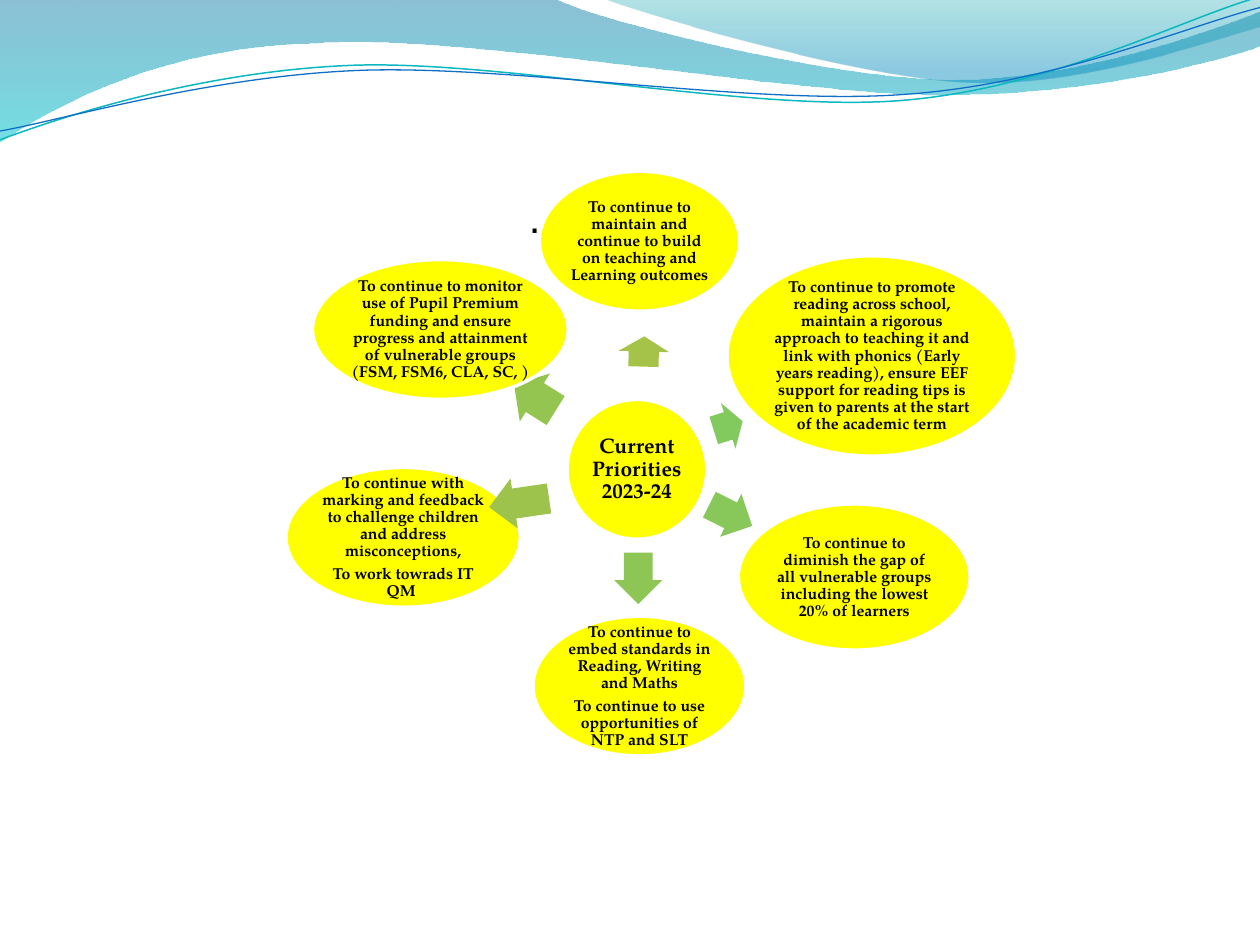
"""Build a slide of school priorities arranged round a central circle."""
from lxml.etree import SubElement
from pptx import Presentation
from pptx.dml.color import RGBColor as RGB
from pptx.enum.shapes import MSO_SHAPE as Kind
from pptx.enum.text import MSO_ANCHOR as Anchor, PP_ALIGN as Align
from pptx.oxml.ns import qn
from pptx.util import Inches, Pt

HUES = {
    "oval": "FFFF00", "text": "000000", "edge": "FFFFFF",
    "teal": "0AB8BF", "blue": "0F6FC6",
    "deep": "0074A1", "cyan": "00C6CF", "sea": "00A1A9", "sky": "008BBF",
}


def draw_path(start, parts, close):
    """Draw a path whose parts hold one line end or three curve points."""
    pts = [(Inches(x), Inches(y)) for part in parts
           for x, y in zip(part[::2], part[1::2])]
    pen = slide.shapes.build_freeform(*map(Inches, start))
    pen.add_line_segments(pts, close=close)
    shape = pen.convert_to_shape()
    shape.shadow.inherit = False
    lines = iter(shape._element.spPr.findall(".//" + qn("a:lnTo")))
    for part in parts:
        line = next(lines)
        if len(part) == 6:
            line.tag = qn("a:cubicBezTo")
            for _ in range(2):
                extra = next(lines)
                line.append(extra[0])
                extra.getparent().remove(extra)
    return shape


def style_text(frame, font, size, bold):
    """Centre the text and set its font."""
    frame.word_wrap = True
    for para in frame.paragraphs:
        para.alignment = Align.CENTER
        for run in para.runs:
            run.font.name = font
            run.font.size = Pt(size)
            run.font.bold = bold
            run.font.color.rgb = RGB.from_string(HUES["text"])


deck = Presentation()
deck.slide_width, deck.slide_height = Inches(10), Inches(7.5)
slide = deck.slides.add_slide(deck.slide_layouts[6])

bands = [
    ((0, 0), [(4.4, -0.01), (4.76, 0.17, 6.64, 0.63, 7.58, 0.63),
              (8.53, 0.63, 9.58, 0.26, 10, 0.09), (10.01, 0.36),
              (9.83, 0.44, 8.7, 0.76, 7.46, 0.75),
              (6.22, 0.75, 3.82, 0.28, 2.57, 0.34),
              (1.29, 0.36, 0.46, 0.83, -0.01, 1.13), (0, 0)],
     [(0, "deep", 45), (1, "cyan", 55)]),
    ((4.79, -0.01), [(5.09, 0.11, 6.82, 0.62, 7.69, 0.65),
                     (8.56, 0.69, 9.61, 0.32, 10, 0.21), (10, 0),
                     (4.79, -0.01)],
     [(0, "sea", 30), (0.8, "sky", 45)]),
]
for start, parts, stops in bands:
    band = draw_path(start, parts, True)
    band.line.fill.background()
    band.fill.gradient()
    band.fill.gradient_angle = 270
    for stop, (place, hue, _) in zip(band.fill.gradient_stops, stops):
        stop.position = place
        stop.color.rgb = RGB.from_string(HUES[hue])
    marks = band._element.spPr.findall(".//" + qn("a:srgbClr"))
    for mark, (_, _, alpha) in zip(marks, stops):
        SubElement(mark, qn("a:alpha")).set("val", str(alpha * 1000))

waves = [
    ((0, 1.11), [(0.48, 0.93, 1.58, 0.57, 2.77, 0.52),
                 (3.95, 0.47, 5.93, 0.89, 7.13, 0.8),
                 (8.33, 0.71, 9.38, 0.15, 9.98, -0.02)], "teal", 0.85),
    ((0, 1.04), [(0.47, 0.96, 1.64, 0.61, 2.83, 0.56),
                 (4.03, 0.51, 5.97, 0.84, 7.17, 0.75),
                 (8.36, 0.67, 9.41, 0.21, 10, 0.06)], "blue", 0.75),
]
for start, parts, hue, width in waves:
    wave = draw_path(start, parts, False)
    wave.fill.background()
    wave.line.color.rgb = RGB.from_string(HUES[hue])
    wave.line.width = Pt(width)

dot = slide.shapes.add_textbox(Inches(0.67), Inches(1.47), Inches(7.24), Inches(0.5))
dot.text_frame.text = ". "
style_text(dot.text_frame, "Arial", 24, False)

goals = [
    ((4.28, 1.36, 1.59, 1.11), 9,
     "To continue to maintain and continue to build on teaching and "
     "Learning outcomes ", None),
    ((5.77, 2.03, 2.3, 1.59), 9,
     "To continue to promote reading across school, maintain a rigorous "
     "approach to teaching it and link with phonics (Early years reading), "
     "ensure EEF support for reading tips is given to parents at the start "
     "of the academic term", (5.66, 3.19, 0.24, 0.38, 342.5, "82C95E")),
    ((4.5, 3.17, 1.11, 1.11), 12, "Current Priorities 2023-24",
     (5.61, 3.9, 0.38, 0.38, 26.4, "88C75A")),
    ((5.86, 4, 1.84, 1.16), 9,
     "To continue to diminish the gap of all vulnerable groups including "
     "the lowest 20% of learners", (4.86, 4.4, 0.41, 0.38, 90, "8EC656")),
    ((4.23, 4.89, 1.69, 1.11), 9,
     "To continue to embed standards in Reading, Writing and Maths\n"
     "To continue to use opportunities of NTP and SLT",
     (4.05, 2.93, 0.39, 0.45, 212.1, "95C551")),
    ((2.27, 3.71, 1.86, 1.11), 9,
     "To continue with marking and feedback to challenge children and "
     "address misconceptions,\nTo work towrads IT QM ",
     (3.88, 3.79, 0.48, 0.4, 171.7, "9DC34D")),
    ((2.48, 2.06, 2.03, 1.11), 9,
     "To continue to monitor use of Pupil Premium funding and ensure "
     "progress and attainment of vulnerable groups (FSM, FSM6, CLA, SC, )",
     (4.99, 2.59, 0.24, 0.4, 271.6, "A5C249")),
]
for box, size, words, arrow in goals:
    oval = slide.shapes.add_shape(Kind.OVAL, *map(Inches, box))
    oval.shadow.inherit = False
    oval.fill.solid()
    oval.fill.fore_color.rgb = RGB.from_string(HUES["oval"])
    oval.line.color.rgb = RGB.from_string(HUES["edge"])
    oval.line.width = Pt(2)
    frame = oval.text_frame
    frame.text = words
    frame.vertical_anchor = Anchor.MIDDLE
    inset = Inches(0.02 if size == 12 else 0.01)
    frame.margin_left = frame.margin_right = inset
    frame.margin_top = frame.margin_bottom = inset
    style_text(frame, "TeX Gyre Pagella", size, True)
    for para in frame.paragraphs:
        para.line_spacing = 0.9
        para.space_after = Pt(0.35 * size)
    if arrow:
        *place, turn, hue = arrow
        head = slide.shapes.add_shape(Kind.RIGHT_ARROW, *map(Inches, place))
        head.shadow.inherit = False
        head.adjustments[0], head.adjustments[1] = 0.6, 0.5
        head.rotation = turn
        head.fill.solid()
        head.fill.fore_color.rgb = RGB.from_string(hue)
        head.line.fill.background()

deck.save("out.pptx")
